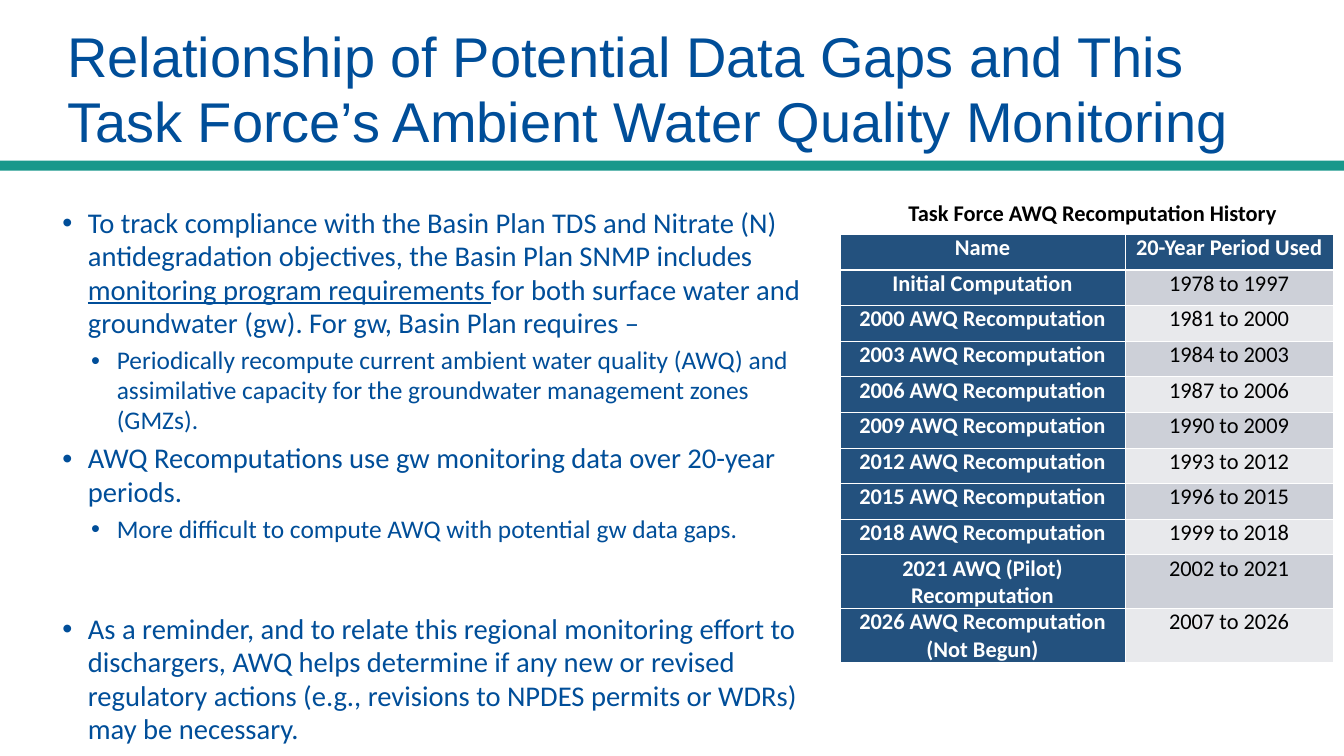
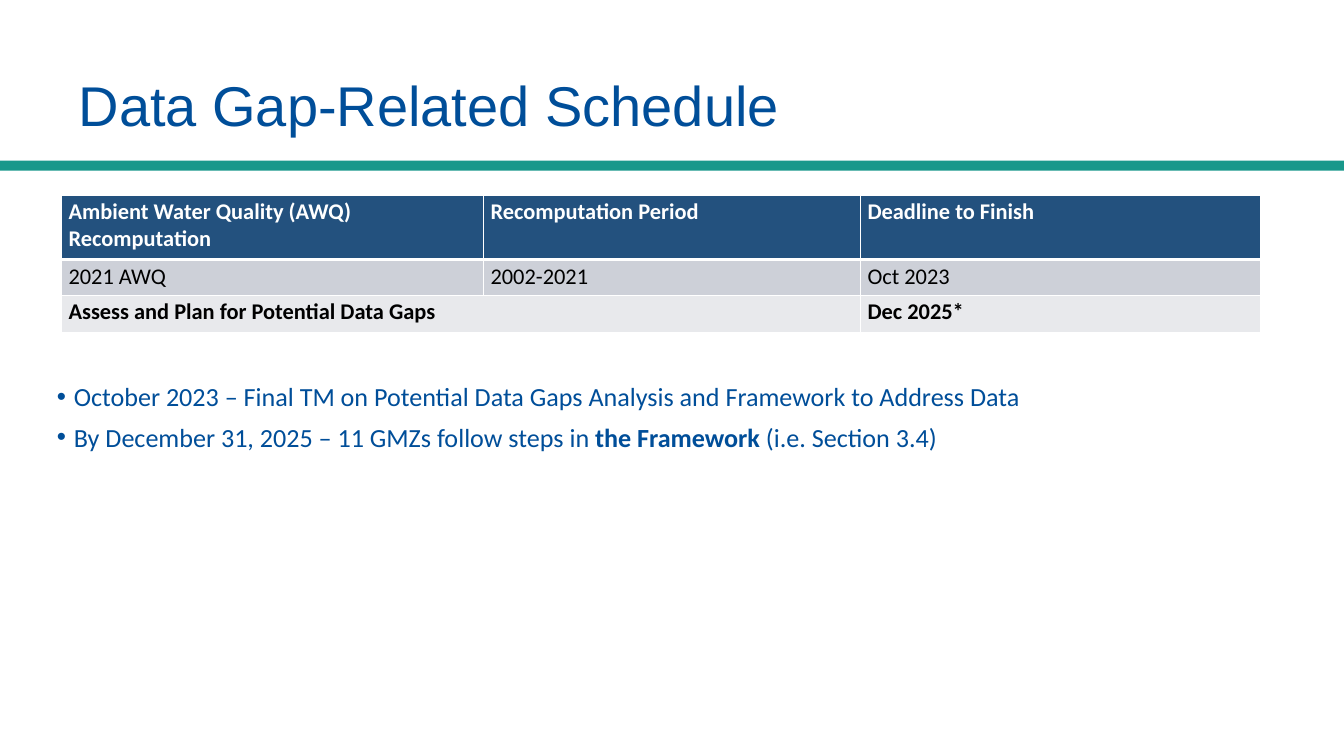
from dataclasses import dataclass
from typing import NamedTuple, Optional

from pptx import Presentation
from pptx.dml.color import RGBColor
from pptx.enum.shapes import MSO_SHAPE as Preset
from pptx.enum.text import MSO_ANCHOR as Anchor, PP_ALIGN as Align
from pptx.oxml.ns import qn
from pptx.util import Inches, Pt
from lxml.etree import SubElement

COLORS = {
    "blue": "004E99",
    "teal": "18988B",
    "navy": "23517E",
    "band_dark": "CDD0D8",
    "band_light": "E8E9EC",
    "white": "FFFFFF",
    "black": "000000",
}
TITLE_FONT, BODY_FONT = "Arial", "Calibri"
SLIDE_W, SLIDE_H = Inches(20), Inches(11.25)
TABLE_SIZE = 24
YEARS_IN_PERIOD = 20


def across(percent: float) -> int:
    return round(SLIDE_W * percent / 100)


def down(percent: float) -> int:
    return round(SLIDE_H * percent / 100)


class Area(NamedTuple):
    """Left, top, width and height as percentages of the slide."""
    left: float
    top: float
    width: float
    height: float

    def emu(self) -> tuple[int, int, int, int]:
        return across(self.left), down(self.top), across(self.width), down(self.height)


class Words(NamedTuple):
    text: str
    bold: bool = False
    underline: bool = False


@dataclass(frozen=True)
class Bullet:
    words: tuple[Words, ...]
    size: float
    before: float
    margin: float
    hang: float
    level: int = 0
    spacing: Optional[float] = None


@dataclass(frozen=True)
class Cell:
    text: str
    fill: str
    ink: str = "black"
    bold: bool = False
    span: int = 1


@dataclass(frozen=True)
class Grid:
    left: float
    top: float
    columns: tuple[float, ...]
    rows: tuple[float, ...]
    align: Align
    inset: tuple[float, float]


BAND = Area(0, 21.24, 100, 1.33)


def color(name: str) -> RGBColor:
    return RGBColor.from_string(COLORS[name])


def add_run(paragraph, words: Words, size: float, ink: str, font: str = BODY_FONT) -> None:
    run = paragraph.add_run()
    run.text = words.text
    run.font.name, run.font.size = font, Pt(size)
    run.font.bold = words.bold
    run.font.underline = words.underline
    run.font.color.rgb = color(ink)


def add_titled_slide(deck, title: str, area: Area):
    slide = deck.slides.add_slide(deck.slide_layouts[5])
    band = slide.shapes.add_shape(Preset.RECTANGLE, *BAND.emu())
    band.shadow.inherit = False
    band.fill.solid()
    band.fill.fore_color.rgb = color("teal")
    band.line.fill.background()

    heading = slide.shapes.title
    heading.left, heading.top, heading.width, heading.height = area.emu()
    frame = heading.text_frame
    frame.margin_left = frame.margin_top = frame.margin_right = frame.margin_bottom = 0
    frame.vertical_anchor = Anchor.TOP
    frame.word_wrap = True
    paragraph = frame.paragraphs[0]
    paragraph.alignment = Align.LEFT
    paragraph.line_spacing = Pt(70.2)
    add_run(paragraph, Words(title), 60, "blue", TITLE_FONT)
    return slide


def add_bullets(slide, area: Area, bullets: list[Bullet]) -> None:
    frame = slide.shapes.add_textbox(*area.emu()).text_frame
    frame.word_wrap = True
    for index, bullet in enumerate(bullets):
        paragraph = frame.add_paragraph() if index else frame.paragraphs[0]
        paragraph.level = bullet.level
        paragraph.space_before = Pt(bullet.before)
        paragraph.line_spacing = bullet.spacing
        props = paragraph._p.get_or_add_pPr()
        props.set("marL", str(Inches(bullet.margin)))
        props.set("indent", str(-Inches(bullet.hang)))
        SubElement(props, qn("a:buFont"), typeface="Arial")
        SubElement(props, qn("a:buChar"), char="•")
        for words in bullet.words:
            add_run(paragraph, words, bullet.size, "blue")


def add_caption(slide, area: Area, text: str) -> None:
    frame = slide.shapes.add_textbox(*area.emu()).text_frame
    frame.word_wrap = False
    add_run(frame.paragraphs[0], Words(text, bold=True), TABLE_SIZE, "black")


def add_borders(cell, top: float, bottom: float) -> None:
    """Draw white cell edges; call before the fill, which must follow them in the XML."""
    props = cell._tc.get_or_add_tcPr()
    for edge, points in (("L", 1), ("R", 1), ("T", top), ("B", bottom)):
        line = SubElement(props, qn(f"a:ln{edge}"), w=str(Pt(points)))
        SubElement(SubElement(line, qn("a:solidFill")), qn("a:srgbClr"), val=COLORS["white"])


def add_grid(slide, grid: Grid, content: list[list[Cell]]) -> None:
    area = Area(grid.left, grid.top, sum(grid.columns), sum(grid.rows))
    table = slide.shapes.add_table(len(grid.rows), len(grid.columns), *area.emu()).table
    table.horz_banding = False
    for column, width in zip(table.columns, grid.columns):
        column.width = across(width)
    for row, height in zip(table.rows, grid.rows):
        row.height = down(height)
    side, edge = (Inches(inset) for inset in grid.inset)
    for r, entries in enumerate(content):
        c = 0
        for entry in entries:
            cell = table.cell(r, c)
            if entry.span > 1:
                cell.merge(table.cell(r, c + entry.span - 1))
            cell.margin_left = cell.margin_right = side
            cell.margin_top = cell.margin_bottom = edge
            for part in range(c, c + entry.span):
                covered = table.cell(r, part)
                add_borders(covered, 3 if r == 1 else 1, 3 if r == 0 else 1)
                covered.fill.solid()
                covered.fill.fore_color.rgb = color(entry.fill)
            paragraph = cell.text_frame.paragraphs[0]
            paragraph.alignment = grid.align
            add_run(paragraph, Words(entry.text, entry.bold), TABLE_SIZE, entry.ink)
            c += entry.span


def header(text: str) -> Cell:
    return Cell(text, "navy", "white", bold=True)


def requirement(*words: Words, before: float = 7) -> Bullet:
    return Bullet(words, 30.6, before, 0.38, 0.38, spacing=0.985)


def detail(text: str) -> Bullet:
    return Bullet((Words(text),), 27.2, 5.5, 0.81, 0.38, level=1, spacing=0.985)


def milestone(*words: Words) -> Bullet:
    return Bullet(words, 28, 10, 0.25, 0.25)


def recomputation_history() -> list[list[Cell]]:
    names = {1997: "Initial Computation"}
    names |= {year: f"{year} AWQ Recomputation" for year in range(2000, 2019, 3)}
    names |= {2021: "2021 AWQ (Pilot) Recomputation",
              2026: "2026 AWQ Recomputation (Not Begun)"}
    rows = [[header("Name"), header("20-Year Period Used")]]
    for index, (end, name) in enumerate(names.items()):
        shade = "band_light" if index % 2 else "band_dark"
        rows.append([header(name), Cell(f"{end - YEARS_IN_PERIOD + 1} to {end}", shade)])
    return rows


def build_relationship(deck) -> None:
    slide = add_titled_slide(
        deck,
        "Relationship of Potential Data Gaps and This Task Force’s Ambient Water Quality Monitoring",
        Area(5, 3.02, 91.25, 17.42))
    add_bullets(slide, Area(4.15, 26.84, 56.65, 69.07), [
        requirement(
            Words("To track compliance with the Basin Plan TDS and Nitrate (N) antidegradation "
                  "objectives, the Basin Plan SNMP includes "),
            Words("monitoring program requirements ", underline=True),
            Words("for both surface water and groundwater (gw). For gw, Basin Plan requires –")),
        detail("Periodically recompute current ambient water quality (AWQ) and assimilative "
               "capacity for the groundwater management zones (GMZs)."),
        requirement(Words("AWQ Recomputations use gw monitoring data over 20-year periods.")),
        detail("More difficult to compute AWQ with potential gw data gaps."),
        requirement(
            Words("As a reminder, and to relate this regional monitoring effort to dischargers, "
                  "AWQ helps determine if any new or revised regulatory actions (e.g., revisions "
                  "to NPDES permits or WDRs) may be necessary."),
            before=73),
    ])
    history = recomputation_history()
    add_grid(slide, Grid(62.5, 31.02, (21.2, 15.5), (4.71,) * len(history),
                         Align.CENTER, (0.07, 0)), history)
    add_caption(slide, Area(67.1, 25.96, 28.65, 4.44), "Task Force AWQ Recomputation History")


def build_schedule(deck) -> None:
    slide = add_titled_slide(deck, "Data Gap-Related Schedule", Area(5.85, 9.6, 77.9, 8.71))
    add_grid(slide, Grid(4.6, 25.78, (31.4, 28.05, 29.7), (8.53, 4.71, 4.89),
                         Align.LEFT, (0.1, 0.05)), [
        [header(text) for text in ("Ambient Water Quality (AWQ) Recomputation",
                                   "Recomputation Period", "Deadline to Finish")],
        [Cell(text, "band_dark") for text in ("2021 AWQ", "2002-2021", "Oct 2023")],
        [Cell("Assess and Plan for Potential Data Gaps", "band_light", bold=True, span=2),
         Cell("Dec 2025*", "band_light", bold=True)],
    ])
    add_bullets(slide, Area(3.75, 49.87, 94.3, 13.96), [
        milestone(Words("October 2023 – Final TM on Potential Data Gaps Analysis and Framework "
                        "to Address Data")),
        milestone(Words("By December 31, 2025 – 11 GMZs follow steps in "),
                  Words("the Framework ", bold=True),
                  Words("(i.e. Section 3.4)")),
    ])


def main() -> None:
    deck = Presentation()
    deck.slide_width, deck.slide_height = SLIDE_W, SLIDE_H
    build_relationship(deck)
    build_schedule(deck)
    deck.save("out.pptx")


if __name__ == "__main__":
    main()
